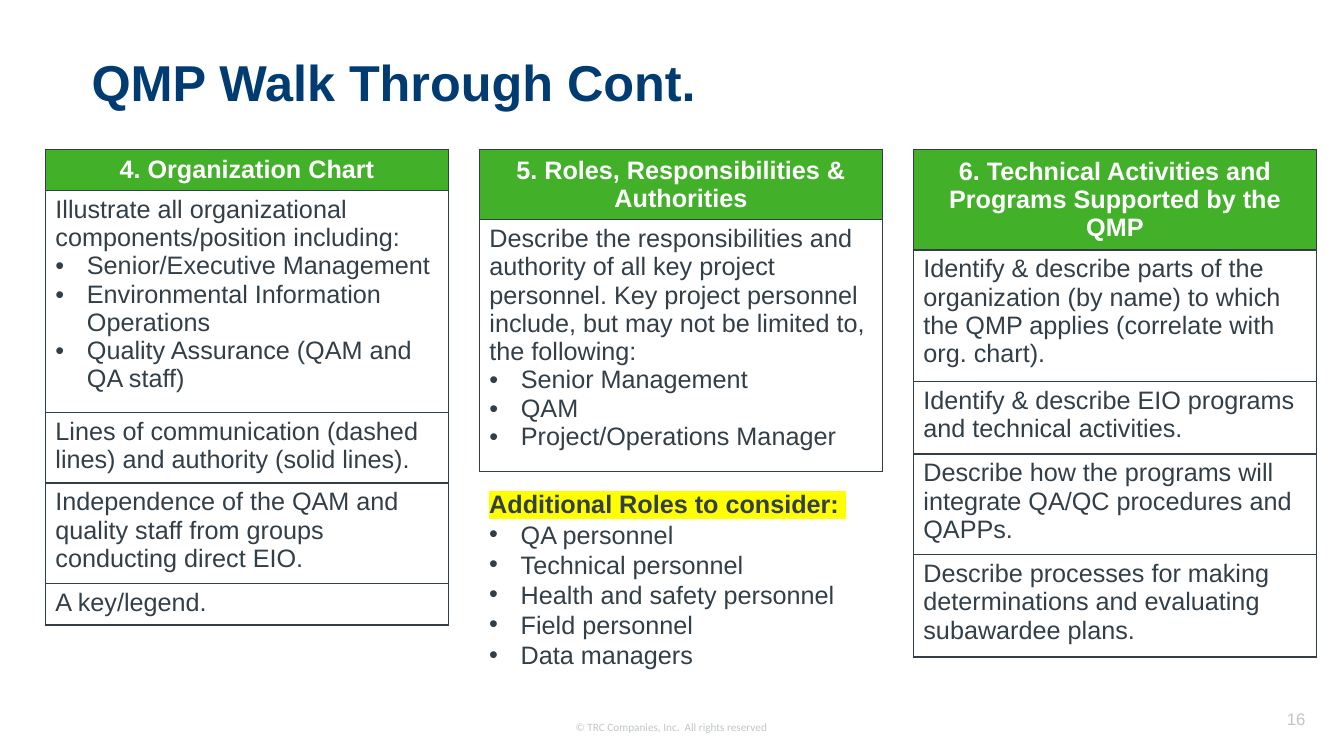
from dataclasses import dataclass

from lxml import etree
from pptx import Presentation
from pptx import util as u
from pptx.dml.color import RGBColor
from pptx.enum import shapes, text
from pptx.oxml import ns

Pt = u.Pt


@dataclass(frozen=True)
class Theme:
    font: str = "Arial"
    footer_font: str = "Calibri"
    navy: str = "003C71"
    green: str = "43B02A"
    ink: str = "333F48"
    grey: str = "C1C6C8"
    white: str = "FFFFFF"
    yellow: str = "FFFF00"
    title_size: float = 36
    body_size: float = 18
    number_size: float = 12
    footer_size: float = 8


THEME = Theme()


@dataclass(frozen=True)
class Line:
    words: str
    bullet: bool = False
    bold: bool = False
    color: str = THEME.ink
    size: float = THEME.body_size
    font: str = THEME.font
    align: text.PP_ALIGN = text.PP_ALIGN.LEFT
    spacing: float | None = None
    highlight: str | None = None


@dataclass(frozen=True)
class Section:
    heading: str
    rows: list[list[Line]]
    heights: list[float]


COLUMN_LEFT, COLUMN_TOP = 32.4, 106.6
COLUMN_WIDTH, COLUMN_PITCH = 288, 310
ROW_HEIGHT = 29.5
BULLET_INDENT = 22.5
ROLE_SPACING = 21.5


def bullets(*items: str, spacing: float | None = None) -> list[Line]:
    return [Line(item, bullet=True, spacing=spacing) for item in items]


SECTIONS = [
    Section("4. Organization Chart", [
        [Line("Illustrate all organizational components/position including:"),
         *bullets("Senior/Executive Management",
                  "Environmental Information Operations",
                  "Quality Assurance (QAM and QA staff)")],
        [Line("Lines of communication (dashed lines) and authority (solid lines).")],
        [Line("Independence of the QAM and quality staff from groups conducting direct EIO.")],
        [Line("A key/legend.")],
    ], [ROW_HEIGHT] * 5),
    Section("5. Roles, Responsibilities & Authorities", [
        [Line("Describe the responsibilities and authority of all key project personnel. "
              "Key project personnel include, but may not be limited to, the following:"),
         *bullets("Senior Management", "QAM", "Project/Operations Manager")],
    ], [ROW_HEIGHT] * 2),
    Section("6. Technical Activities and Programs Supported by the QMP", [
        [Line("Identify & describe parts of the organization (by name) to which the QMP "
              "applies (correlate with org. chart).")],
        [Line("Identify & describe EIO programs and technical activities.")],
        [Line("Describe how the programs will integrate QA/QC procedures and QAPPs.")],
        [Line("Describe processes for making determinations and evaluating subawardee plans.")],
    ], [67.5, 88, 52, 67.5, 73]),
]

EXTRA_ROLES = [
    Line("Additional Roles to consider: ", bold=True, highlight=THEME.yellow),
    *bullets("QA personnel", "Technical personnel", "Health and safety personnel",
             "Field personnel", "Data managers", spacing=ROLE_SPACING),
]


def rgb(color: str) -> RGBColor:
    return RGBColor.from_string(color)


def add_color(parent, tag: str, color: str) -> None:
    holder = etree.SubElement(parent, ns.qn(tag))
    etree.SubElement(holder, ns.qn("a:srgbClr"), val=color)


def write(frame, lines: list[Line]) -> None:
    for index, line in enumerate(lines):
        para = frame.add_paragraph() if index else frame.paragraphs[0]
        if line.bullet:
            props = para._p.get_or_add_pPr()
            props.set("marL", str(Pt(BULLET_INDENT)))
            props.set("indent", str(-Pt(BULLET_INDENT)))
            etree.SubElement(props, ns.qn("a:buFont"), typeface=line.font)
            etree.SubElement(props, ns.qn("a:buChar"), char="•")
        para.alignment = line.align
        if line.spacing:
            para.line_spacing = Pt(line.spacing)
        para.font.name = line.font
        para.font.size = Pt(line.size)
        para.font.bold = line.bold
        para.font.color.rgb = rgb(line.color)
        span = para.add_run()
        span.text = line.words
        if line.highlight:
            add_color(span._r.get_or_add_rPr(), "a:highlight", line.highlight)


def add_label(page, left: float, top: float, width: float, height: float,
              line: Line, anchor: text.MSO_ANCHOR, wrap: bool = True) -> None:
    box = page.shapes.add_textbox(Pt(left), Pt(top), Pt(width), Pt(height))
    box.text_frame.word_wrap = wrap
    box.text_frame.vertical_anchor = anchor
    write(box.text_frame, [line])


def style_cell(cell, fill: str) -> None:
    props = cell._tc.get_or_add_tcPr()
    for side in ("a:lnL", "a:lnR", "a:lnT", "a:lnB"):
        border = etree.SubElement(props, ns.qn(side), w=str(Pt(1)))
        add_color(border, "a:solidFill", THEME.ink)
    cell.fill.solid()
    cell.fill.fore_color.rgb = rgb(fill)


def add_section(page, section: Section, left: float) -> None:
    table = page.shapes.add_table(
        len(section.heights), 1, Pt(left), Pt(COLUMN_TOP),
        Pt(COLUMN_WIDTH), Pt(sum(section.heights))).table
    table.first_row = table.horz_banding = False
    heading = Line(section.heading, bold=True, color=THEME.white,
                   align=text.PP_ALIGN.CENTER)
    for index, lines in enumerate([[heading], *section.rows]):
        table.rows[index].height = Pt(section.heights[index])
        cell = table.cell(index, 0)
        style_cell(cell, THEME.white if index else THEME.green)
        cell.vertical_anchor = text.MSO_ANCHOR.TOP if index else text.MSO_ANCHOR.MIDDLE
        write(cell.text_frame, lines)


def add_extra_roles(page) -> None:
    panel = page.shapes.add_shape(
        shapes.MSO_SHAPE.RECTANGLE, Pt(COLUMN_LEFT + COLUMN_PITCH), Pt(345.6),
        Pt(COLUMN_WIDTH), Pt(141))
    panel.shadow.inherit = False
    panel.fill.solid()
    panel.fill.fore_color.rgb = rgb(THEME.white)
    panel.line.fill.background()
    panel.text_frame.word_wrap = True
    panel.text_frame.vertical_anchor = text.MSO_ANCHOR.TOP
    write(panel.text_frame, EXTRA_ROLES)


def main() -> None:
    deck = Presentation()
    deck.slide_width, deck.slide_height = Pt(960), Pt(540)
    page = deck.slides.add_slide(deck.slide_layouts[6])

    # Footer and slide number
    add_label(page, 404, 511.2, 152.6, 17.3,
              Line("© TRC Companies, Inc.  All rights reserved", color=THEME.grey,
                   size=THEME.footer_size, font=THEME.footer_font),
              text.MSO_ANCHOR.TOP, wrap=False)
    add_label(page, 745.2, 499, 194.4, 28.8,
              Line("16", color=THEME.grey, size=THEME.number_size,
                   align=text.PP_ALIGN.RIGHT),
              text.MSO_ANCHOR.MIDDLE)

    # Title
    add_label(page, 58.3, 47.5, 679, 36,
              Line("QMP Walk Through Cont.", bold=True, color=THEME.navy,
                   size=THEME.title_size),
              text.MSO_ANCHOR.BOTTOM)

    # Roles below the middle column, then the three section tables
    add_extra_roles(page)
    for index, section in enumerate(SECTIONS):
        add_section(page, section, COLUMN_LEFT + index * COLUMN_PITCH)

    deck.save("out.pptx")


if __name__ == "__main__":
    main()
